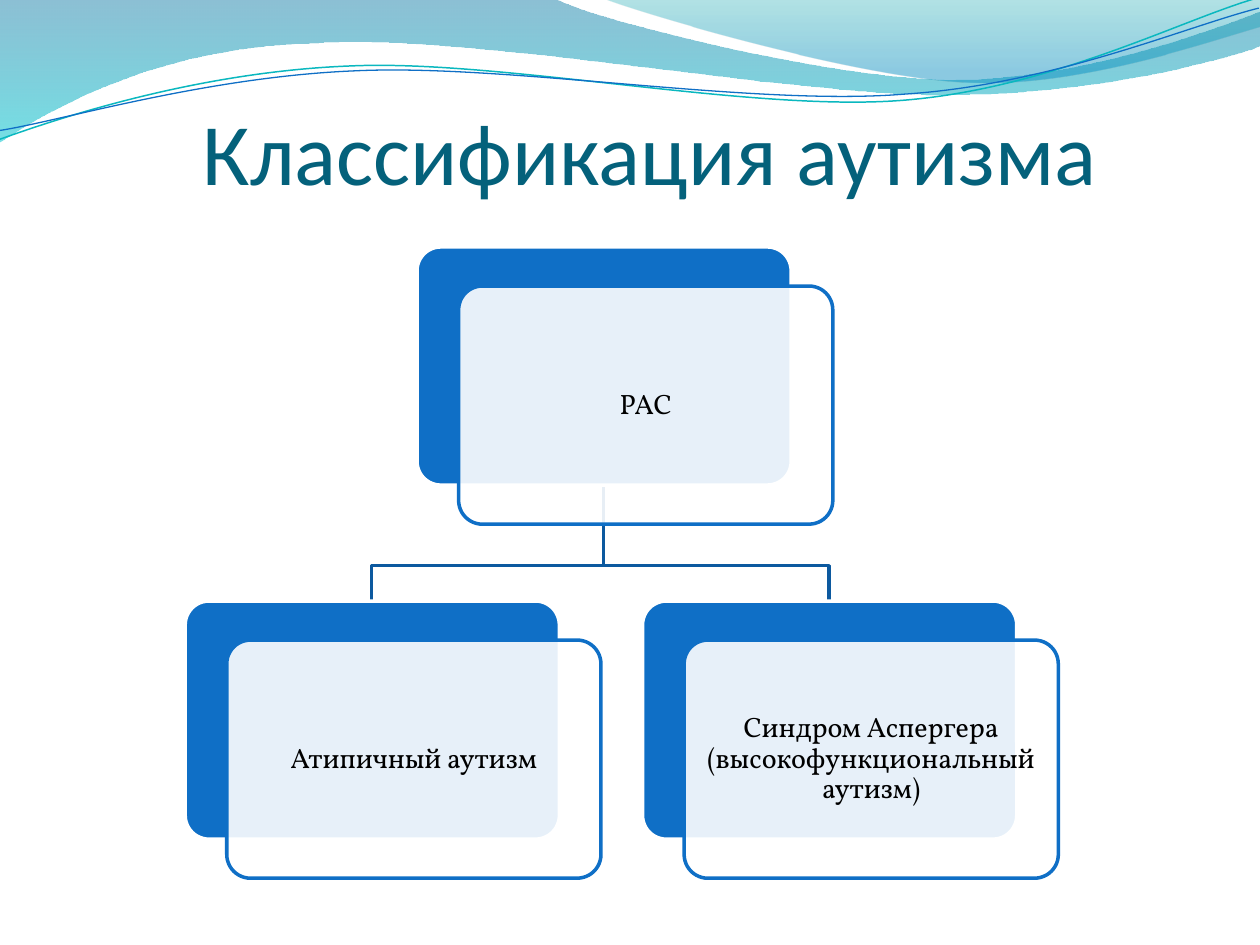
from lxml import etree
from pptx import Presentation
from pptx import util as u
from pptx.dml.color import RGBColor
from pptx.enum import shapes, text
from pptx.oxml.ns import qn

SCALE = 9144

WHITE = RGBColor(0xFF, 0xFF, 0xFF)
BLACK = RGBColor(0, 0, 0)
BLUE = RGBColor(0x0F, 0x6F, 0xC6)
DARK_BLUE = RGBColor(0x0C, 0x59, 0x9F)
TEAL = RGBColor(0x0A, 0xB8, 0xBF)
TITLE_COLOR = RGBColor(0x04, 0x61, 0x7B)
WAVE_BLUE = RGBColor(0x00, 0x74, 0xA1)
WAVE_CYAN = RGBColor(0x00, 0xC6, 0xCF)
CREST_GREEN = RGBColor(0x00, 0xA1, 0xA9)
CREST_BLUE = RGBColor(0x00, 0x8B, 0xBF)

CARD_WIDTH, CARD_HEIGHT = 297, 189
CARD_OFFSET_X, CARD_OFFSET_Y = 33, 31
PARENT = (331, 196, "РАС")
CHILDREN = [
    (147, 477, "Атипичный аутизм"),
    (510, 477, "Синдром Аспергера (высокофункциональный аутизм)"),
]
BRANCH_Y = 449
STRAND_ROTATION = 357.3

WAVE = [
    (0, 0), (440, -1),
    (476, 17, 664, 63, 758, 63), (853, 63, 958, 26, 1000, 9),
    (1001, 36),
    (983, 44, 870, 76, 746, 75), (622, 75, 382, 28, 257, 34),
    (129, 36, 46, 83, -1, 113), (0, 0),
]
CREST = [
    (479, -1),
    (509, 11, 682, 62, 769, 65), (856, 69, 961, 32, 1000, 21),
    (1000, 0), (479, -1),
]
TEAL_STRAND = [
    (-2, 87),
    (47, 72, 158, 41, 278, 42), (396, 42, 591, 93, 712, 90),
    (832, 87, 940, 36, 1000, 22),
]
BLUE_STRAND = [
    (-2, 80),
    (46, 75, 164, 45, 283, 46), (403, 46, 596, 89, 716, 85),
    (835, 83, 942, 42, 1001, 30),
]


def px(value):
    return round(value * SCALE)


def set_opacity(color_element, percent):
    alpha = etree.SubElement(color_element, qn("a:alpha"))
    alpha.set("val", str(percent * 1000))


def bend_segments(shape, steps):
    segments = iter(list(shape._element.iter(qn("a:lnTo"))))
    for step in steps:
        first = next(segments)
        if len(step) == 2:
            continue
        curve = etree.Element(qn("a:cubicBezTo"))
        first.addprevious(curve)
        for segment in (first, next(segments), next(segments)):
            curve.append(segment[0])
            segment.getparent().remove(segment)


class SlideBuilder:
    title_font = "Calibri"
    body_font = "Vollkorn"

    def __init__(self, slide):
        self.slide = slide

    def outline(self, path, closed):
        points = [
            (px(step[index]), px(step[index + 1]))
            for step in path
            for index in range(0, len(step), 2)
        ]
        builder = self.slide.shapes.build_freeform(*points[0], scale=1.0)
        builder.add_line_segments(points[1:], close=closed)
        shape = builder.convert_to_shape()
        bend_segments(shape, path[1:])
        shape.shadow.inherit = False
        return shape

    def wave(self, path, stops):
        shape = self.outline(path, True)
        shape.line.fill.background()
        shape.fill.gradient()
        shape.fill.gradient_angle = 270
        for stop, (position, color, opacity) in zip(shape.fill.gradient_stops, stops):
            stop.position = position
            stop.color.rgb = color
        colors = list(shape._element.spPr.iter(qn("a:srgbClr")))
        for element, (position, color, opacity) in zip(colors, stops):
            set_opacity(element, opacity)

    def strand(self, path, color, width, rotation=0):
        shape = self.outline(path, False)
        shape.rotation = rotation
        shape.fill.background()
        shape.line.color.rgb = color
        shape.line.width = u.Pt(width)

    def title(self, left, top, width, height, indent, wording):
        box = self.slide.shapes.add_textbox(px(left), px(top), px(width), px(height))
        frame = box.text_frame
        frame.word_wrap = True
        frame.vertical_anchor = text.MSO_ANCHOR.BOTTOM
        frame.margin_left = px(indent)
        frame.margin_right = frame.margin_bottom = 0
        frame.margin_top = px(5)
        paragraph = frame.paragraphs[0]
        paragraph.text = wording
        self.set_font(paragraph, self.title_font, 50, TITLE_COLOR)

    def set_font(self, paragraph, name, size, color):
        paragraph.font.name = name
        paragraph.font.size = u.Pt(size)
        paragraph.font.color.rgb = color

    def panel(self, left, top, fill, line):
        shape = self.slide.shapes.add_shape(
            shapes.MSO_SHAPE.ROUNDED_RECTANGLE,
            px(left), px(top), px(CARD_WIDTH), px(CARD_HEIGHT),
        )
        shape.shadow.inherit = False
        shape.adjustments[0] = 0.1
        shape.fill.solid()
        shape.fill.fore_color.rgb = fill
        shape.line.color.rgb = line
        shape.line.width = u.Pt(2)
        return shape

    def card(self, left, top, wording):
        self.panel(left, top, BLUE, WHITE)
        front = self.panel(left + CARD_OFFSET_X, top + CARD_OFFSET_Y, WHITE, BLUE)
        set_opacity(front._element.spPr.find(qn("a:solidFill"))[0], 90)
        frame = front.text_frame
        frame.word_wrap = True
        frame.vertical_anchor = text.MSO_ANCHOR.MIDDLE
        frame.margin_left = frame.margin_right = px(7)
        frame.margin_top = frame.margin_bottom = px(7)
        paragraph = frame.paragraphs[0]
        paragraph.text = wording
        paragraph.alignment = text.PP_ALIGN.CENTER
        paragraph.line_spacing = 0.9
        paragraph.space_after = u.Pt(5.6)
        self.set_font(paragraph, self.body_font, 16, BLACK)

    def branch(self, parent, child):
        start_x = parent[0] + CARD_WIDTH // 2
        end_x = child[0] + CARD_WIDTH // 2
        self.strand([
            (start_x, parent[1] + CARD_HEIGHT),
            (start_x, BRANCH_Y),
            (end_x, BRANCH_Y),
            (end_x, child[1]),
        ], DARK_BLUE, 2)


def main():
    presentation = Presentation()
    presentation.slide_width = px(1000)
    presentation.slide_height = px(750)
    builder = SlideBuilder(presentation.slides.add_slide(presentation.slide_layouts[6]))

    builder.wave(WAVE, [(0, WAVE_BLUE, 45), (1, WAVE_CYAN, 55)])
    builder.wave(CREST, [(0, CREST_GREEN, 30), (0.8, CREST_BLUE, 45)])
    builder.strand(TEAL_STRAND, TEAL, 0.85, STRAND_ROTATION)
    builder.strand(BLUE_STRAND, BLUE, 0.75, STRAND_ROTATION)
    builder.title(51, 36, 900, 125, 110, "Классификация аутизма")

    for child in reversed(CHILDREN):
        builder.branch(PARENT, child)
    for card in [PARENT, *CHILDREN]:
        builder.card(*card)

    presentation.save("out.pptx")


if __name__ == "__main__":
    main()
